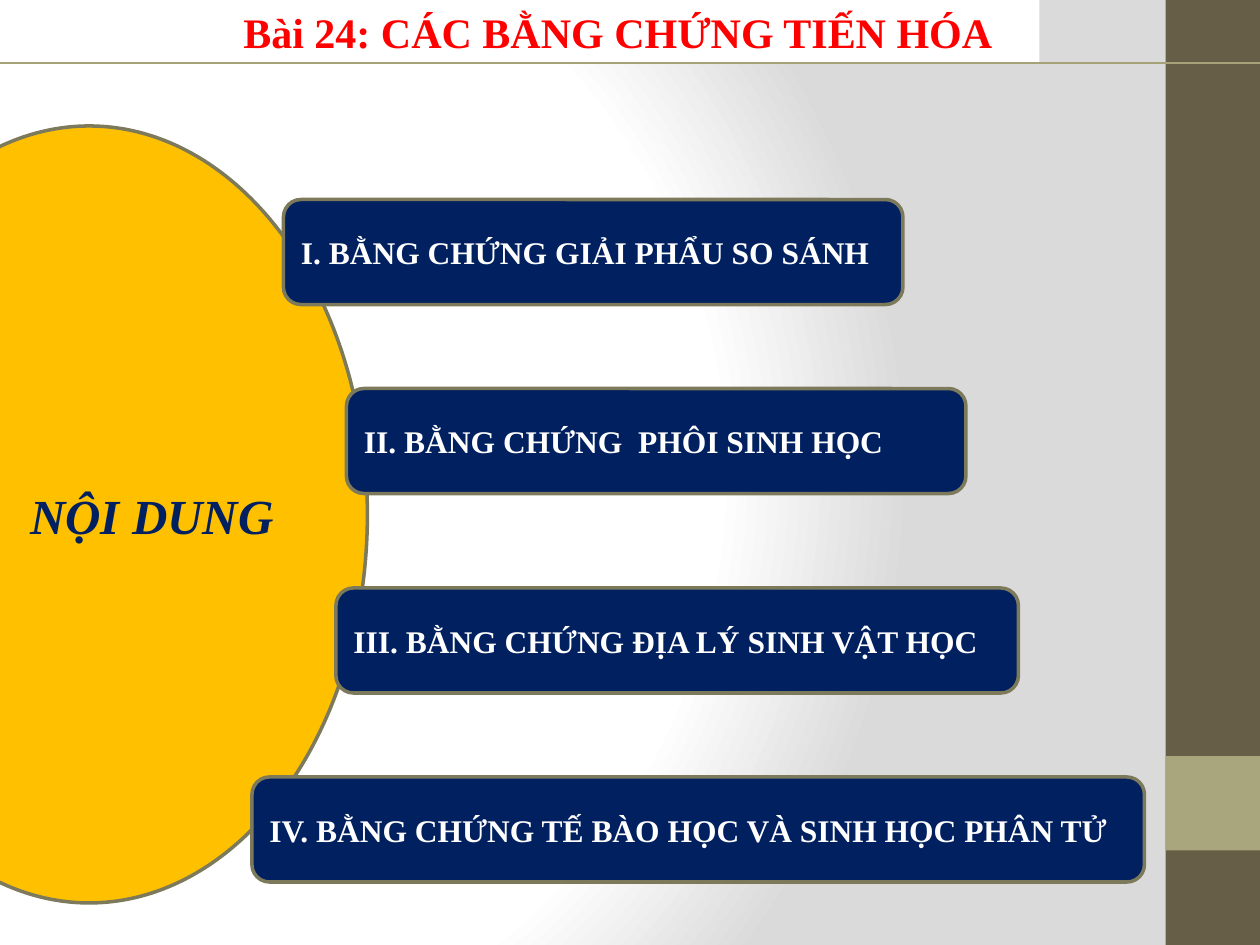
from lxml import etree
from pptx import Presentation
from pptx.dml.color import RGBColor
from pptx.enum.shapes import MSO_CONNECTOR, MSO_SHAPE
from pptx.enum.text import MSO_ANCHOR, PP_ALIGN
from pptx.oxml import parse_xml
from pptx.oxml.ns import qn
from pptx.util import Inches, Pt

RECTANGLE = MSO_SHAPE.RECTANGLE
ROUNDED = MSO_SHAPE.ROUNDED_RECTANGLE
CHORD = MSO_SHAPE.CHORD
STRAIGHT = MSO_CONNECTOR.STRAIGHT
TOP, MIDDLE = MSO_ANCHOR.TOP, MSO_ANCHOR.MIDDLE
LEFT, RIGHT = PP_ALIGN.LEFT, PP_ALIGN.RIGHT

COLORS = {
    "white": "FFFFFF", "grey": "DADADA", "brown": "675E47", "sage": "A9A57C",
    "gold": "FFC000", "navy": "002060", "outline": "7D7A5C", "rule": "A6A278",
    "red": "FF0000",
}
FONT = "Times New Roman"
CELL = Inches(1) // 12  # the slide is a grid of 120 columns by 90 rows
COLUMNS, ROWS = 120, 90


def add_block(kind, column, row, width, height, fill, outline=None):
    """Add a filled shape placed in grid cells."""
    block = slide.shapes.add_shape(
        kind, column * CELL, row * CELL, width * CELL, height * CELL)
    block.shadow.inherit = False
    block.fill.solid()
    block.fill.fore_color.rgb = RGBColor.from_string(COLORS[fill])
    if outline:
        block.line.color.rgb = RGBColor.from_string(COLORS[outline])
        block.line.width = Pt(2)
    else:
        block.line.fill.background()
    return block


def write(block, text, size, color, align=LEFT, anchor=MIDDLE, italic=False):
    frame = block.text_frame
    frame.text = text
    frame.word_wrap = True
    frame.vertical_anchor = anchor
    paragraph = frame.paragraphs[0]
    paragraph.alignment = align
    font = paragraph.runs[0].font
    font.name, font.size, font.bold, font.italic = FONT, Pt(size), True, italic
    font.color.rgb = RGBColor.from_string(COLORS[color])


prs = Presentation()
prs.slide_width, prs.slide_height = COLUMNS * CELL, ROWS * CELL
slide = prs.slides.add_slide(prs.slide_layouts[6])

# Background: white glow on the left fading to grey
background = slide.background.fill
background.solid()
solid = slide.background._cSld.find(".//" + qn("a:solidFill"))
stops = "".join(
    f'<a:gs pos="{share * 1000}"><a:srgbClr val="{COLORS[color]}"/></a:gs>'
    for share, color in [(0, "white"), (75, "white"), (100, "grey")])
glow = parse_xml(
    '<a:gradFill xmlns:a="http://schemas.openxmlformats.org/drawingml/2006/main"'
    f' rotWithShape="1"><a:gsLst>{stops}</a:gsLst><a:path path="circle">'
    '<a:fillToRect l="20000" t="50000" r="100000" b="50000"/></a:path></a:gradFill>')
solid.getparent().replace(solid, glow)

# Side band
add_block(RECTANGLE, 111, 0, 9, ROWS, "brown")
add_block(RECTANGLE, 111, 72, 9, 9, "sage")

# Contents disc, cut off by the slide's left edge
disc = add_block(CHORD, -18, 12, 53, 74, "gold", "outline")
disc.adjustments[0], disc.adjustments[1] = 27, 174.27
disc._element.spPr.xfrm.set("flipH", "1")
write(disc, "NỘI DUNG", 28, "navy", align=RIGHT, italic=True)

# Sections: column, row, width, heading
sections = [
    (27, 19, 59, "I. BẰNG CHỨNG GIẢI PHẨU SO SÁNH"),
    (33, 37, 59, "II. BẰNG CHỨNG  PHÔI SINH HỌC"),
    (32, 56, 65, "III. BẰNG CHỨNG ĐỊA LÝ SINH VẬT HỌC"),
    (24, 74, 85, "IV. BẰNG CHỨNG TẾ BÀO HỌC VÀ SINH HỌC PHÂN TỬ"),
]
for column, row, width, heading in sections:
    section = add_block(ROUNDED, column, row, width, 10, "navy", "outline")
    write(section, heading, 18, "white")

# Lesson title over a full-width rule
title = add_block(RECTANGLE, 22, 0, 77, 6, "white")
write(title, "Bài 24: CÁC BẰNG CHỨNG TIẾN HÓA", 24, "red", anchor=TOP)

rule = slide.shapes.add_connector(STRAIGHT, 0, 6 * CELL, COLUMNS * CELL, 6 * CELL)
rule.line.color.rgb = RGBColor.from_string(COLORS["rule"])
rule.line.width = Pt(1)
etree.SubElement(rule._element.spPr, qn("a:effectLst"))

prs.save("out.pptx")
